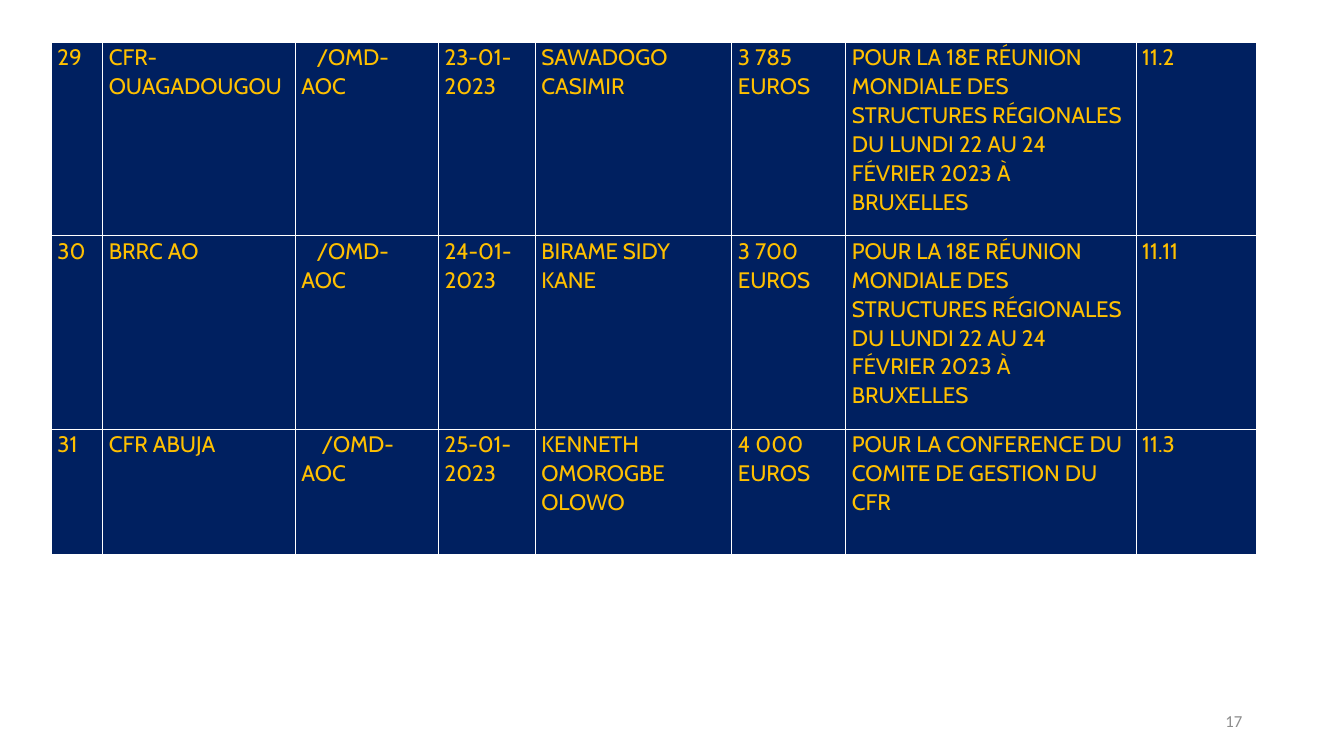
from pptx import Presentation
from pptx.dml.color import RGBColor as RGB
from pptx.enum.text import MSO_ANCHOR as Anchor, PP_ALIGN as Align
from pptx.oxml.ns import qn
from pptx.util import Inches, Pt
from lxml.etree import SubElement as Sub

NAVY = RGB(0x00, 0x20, 0x60)
GOLD = RGB(0xFF, 0xC0, 0x00)
WHITE = RGB(0xFF, 0xFF, 0xFF)
GREY = RGB(0x8C, 0x8C, 0x8C)

WIDTHS = [0.51, 1.91, 1.42, 0.96, 1.95, 1.13, 2.88, 1.19]
HEIGHTS = [1.92, 1.92, 1.24]
REF_COL = 2
INDENTS = [0.15, 0.15, 0.2]
REF = "/OMD-AOC"
MEETING = ("POUR LA 18E RÉUNION MONDIALE DES STRUCTURES RÉGIONALES "
           "DU LUNDI 22 AU 24 FÉVRIER 2023 À BRUXELLES")
ROWS = [
    ["29", "CFR-OUAGADOUGOU", REF, "23-01-2023", "SAWADOGO CASIMIR",
     "3 785 EUROS", MEETING, "11.2"],
    ["30", "BRRC AO", REF, "24-01-2023", "BIRAME SIDY KANE",
     "3 700 EUROS", MEETING, "11.11"],
    ["31", "CFR ABUJA", REF, "25-01-2023", "KENNETH OMOROGBE OLOWO",
     "4 000 EUROS", "POUR LA CONFERENCE DU COMITE DE GESTION DU CFR", "11.3"],
]


def style(para, name, size, color):
    """Set the font of each run in a paragraph."""
    for run in para.runs:
        run.font.name = name
        run.font.size = Pt(size)
        run.font.color.rgb = color


def border(cell):
    """Draw a thin white line on all four sides of a cell."""
    props = cell._tc.get_or_add_tcPr()
    for side in ("a:lnL", "a:lnR", "a:lnT", "a:lnB"):
        line = Sub(props, qn(side), w=str(Pt(1)))
        fill = Sub(line, qn("a:solidFill"))
        Sub(fill, qn("a:srgbClr"), val=str(WHITE))


def fill_cell(cell, text, indent):
    """Write and format one table cell."""
    cell.margin_left = cell.margin_right = Inches(0.06)
    cell.margin_top = cell.margin_bottom = 0
    border(cell)
    cell.fill.solid()
    cell.fill.fore_color.rgb = NAVY
    cell.text_frame.text = text
    para = cell.text_frame.paragraphs[0]
    para.line_spacing = 1.07
    if indent:
        props = para._p.get_or_add_pPr()
        props.set("marL", "0")
        props.set("indent", str(Inches(indent)))
    style(para, "Cabin", 16, GOLD)


def add_grid(slide):
    """Add the table of payments."""
    table = slide.shapes.add_table(
        len(ROWS), len(WIDTHS), Inches(0.51), Inches(0.42),
        Inches(sum(WIDTHS)), Inches(sum(HEIGHTS))).table
    table.first_row = table.horz_banding = False
    for col, width in zip(table.columns, WIDTHS):
        col.width = Inches(width)
    for row, height in zip(table.rows, HEIGHTS):
        row.height = Inches(height)
    for r, texts in enumerate(ROWS):
        for c, text in enumerate(texts):
            indent = INDENTS[r] if c == REF_COL else 0
            fill_cell(table.cell(r, c), text, indent)


def add_page(slide, number):
    """Add the page number at the lower right."""
    box = slide.shapes.add_textbox(
        Inches(9.42), Inches(6.95), Inches(3), Inches(0.4))
    frame = box.text_frame
    frame.word_wrap = True
    frame.vertical_anchor = Anchor.MIDDLE
    frame.text = number
    para = frame.paragraphs[0]
    para.alignment = Align.RIGHT
    style(para, "Calibri", 12, GREY)


def main():
    """Build the slide and save it."""
    deck = Presentation()
    deck.slide_width = Inches(13.33)
    deck.slide_height = Inches(7.5)
    slide = deck.slides.add_slide(deck.slide_layouts[6])
    add_grid(slide)
    add_page(slide, "17")
    deck.save("out.pptx")


if __name__ == "__main__":
    main()
